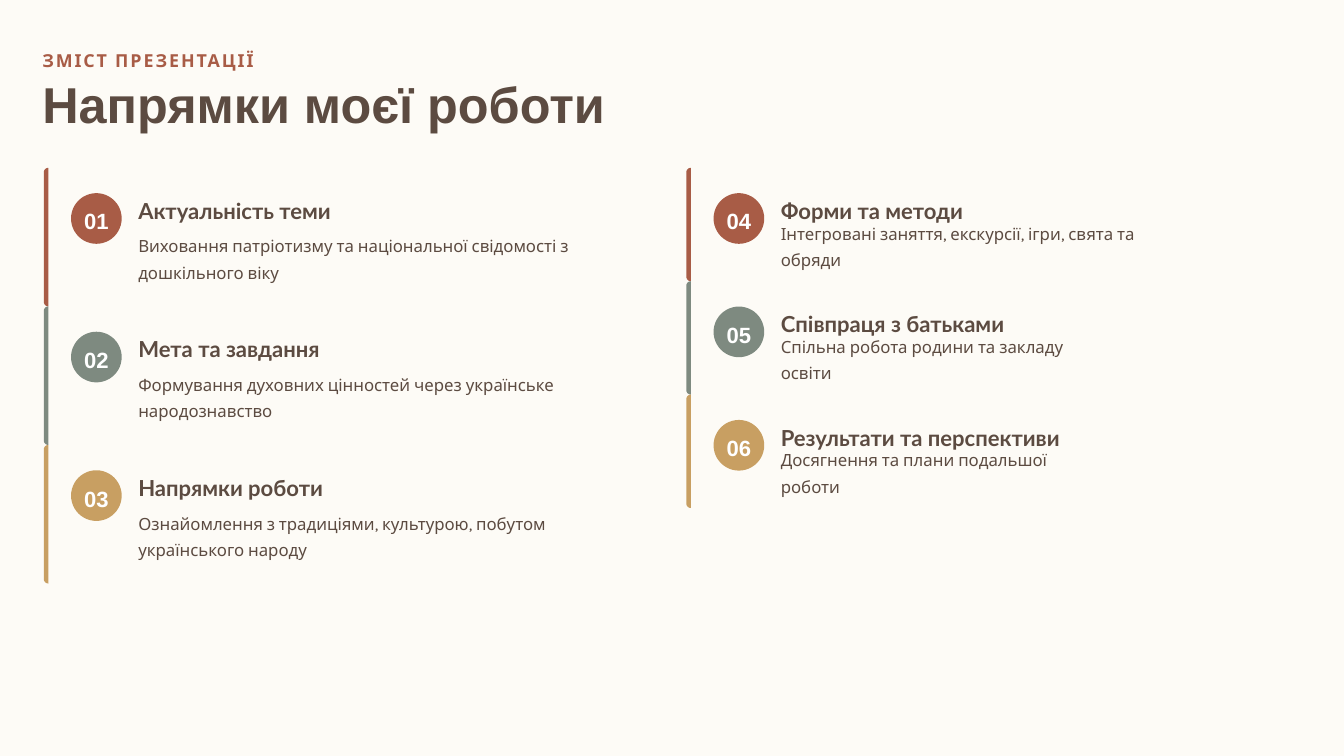
import math

from pptx import Presentation
from pptx.dml.color import RGBColor
from pptx.enum import shapes, text
from pptx.util import Inches, Pt

BACKGROUND, INK, WHITE = "FDFBF6", "5C4B41", "FFFFFF"
TERRACOTTA, SAGE, OCHRE = ACCENTS = "A85C46", "7E8A80", "C89F62"

KICKER = "ЗМІСТ ПРЕЗЕНТАЦІЇ"
TITLE = "Напрямки моєї роботи"
# Each column: left edge, row height, description height, topics.
# Each topic: heading, description, text width.
COLUMNS = [
    (0.58, 1.833, 0.67, [
        ("Актуальність теми",
         "Виховання патріотизму та національної свідомості з дошкільного віку", 6.67),
        ("Мета та завдання",
         "Формування духовних цінностей через українське народознавство", 6.67),
        ("Напрямки роботи",
         "Ознайомлення з традиціями, культурою, побутом українського народу", 6.67),
    ]),
    (9.08, 1.5, 0.33, [
        ("Форми та методи", "Інтегровані заняття, екскурсії, ігри, свята та обряди", 5.43),
        ("Співпраця з батьками", "Спільна робота родини та закладу освіти", 4.39),
        ("Результати та перспективи", "Досягнення та плани подальшої роботи", 4.24),
    ]),
]
TOP = 2.22
BAR_WIDTH = 0.06
BADGE = 0.67
BADGE_DX, TEXT_DX = 0.36, 1.25
HEADING_DY, DESCRIPTION_DY = 0.335, 0.835


def color(hex_code):
    return RGBColor.from_string(hex_code)


def paint(shape, hex_code):
    shape.fill.solid()
    shape.fill.fore_color.rgb = color(hex_code)
    shape.line.fill.background()
    shape.shadow.inherit = False


def write(shape, words, font, size, hex_code, bold=True, spacing=1.2,
          align=text.PP_ALIGN.LEFT):
    frame = shape.text_frame
    frame.margin_left = frame.margin_top = frame.margin_right = frame.margin_bottom = 0
    frame.word_wrap = True
    frame.auto_size = text.MSO_AUTO_SIZE.NONE
    frame.vertical_anchor = text.MSO_ANCHOR.MIDDLE
    frame.text = words
    paragraph = frame.paragraphs[0]
    paragraph.alignment = align
    paragraph.line_spacing = spacing
    paragraph.font.name = font
    paragraph.font.size = Pt(size)
    paragraph.font.bold = bold
    paragraph.font.color.rgb = color(hex_code)
    return paragraph


def add_text(slide, box, *args, **style):
    shape = slide.shapes.add_textbox(*map(Inches, box))
    return write(shape, *args, **style)


def add_bar(slide, left, top, height, hex_code):
    """Upright strip whose two left corners are rounded."""
    right, bottom, radius = left + BAR_WIDTH, top + height, BAR_WIDTH
    angles = [math.radians(15 * step) for step in range(7)]
    lower = [(right - radius * math.sin(a), bottom - radius * (1 - math.cos(a)))
             for a in angles]
    upper = [(x, top + bottom - y) for x, y in reversed(lower)]
    points = [(Inches(x), Inches(y)) for x, y in lower + upper]
    builder = slide.shapes.build_freeform(*points[0])
    builder.add_line_segments(points[1:], close=True)
    paint(builder.convert_to_shape(), hex_code)


def add_topic(slide, number, topic, left, top, row_height, description_height, accent):
    heading, description, width = topic
    add_bar(slide, left, top, row_height, accent)
    badge = slide.shapes.add_shape(
        shapes.MSO_SHAPE.OVAL, Inches(left + BADGE_DX), Inches(top + HEADING_DY),
        Inches(BADGE), Inches(BADGE))
    paint(badge, accent)
    write(badge, f"{number:02d}", "Arial", 21, WHITE, align=text.PP_ALIGN.CENTER)
    text_left = left + TEXT_DX
    add_text(slide, (text_left, top + HEADING_DY, width, 0.39), heading, "Lato", 21, INK)
    add_text(slide, (text_left, top + DESCRIPTION_DY, width, description_height),
             description, "Karla", 16, INK, bold=False, spacing=1.3)


def main():
    deck = Presentation()
    deck.slide_width, deck.slide_height = Inches(17.78), Inches(10)
    slide = deck.slides.add_slide(deck.slide_layouts[5])
    slide.background.fill.solid()
    slide.background.fill.fore_color.rgb = color(BACKGROUND)

    title = slide.shapes.title
    title.left, title.top, title.width, title.height = map(Inches, (0.56, 1.11, 17, 0.67))
    write(title, TITLE, "Arial", 48, INK, spacing=0.8)

    kicker = add_text(slide, (0.56, 0.56, 16.79, 0.39), KICKER, "Karla", 17,
                      TERRACOTTA, spacing=1.3)
    kicker.runs[0].font._element.set("spc", "180")

    number = 1
    for left, row_height, description_height, topics in COLUMNS:
        for row, (topic, accent) in enumerate(zip(topics, ACCENTS)):
            add_topic(slide, number, topic, left, TOP + row * row_height,
                      row_height, description_height, accent)
            number += 1
    deck.save("out.pptx")


if __name__ == "__main__":
    main()
